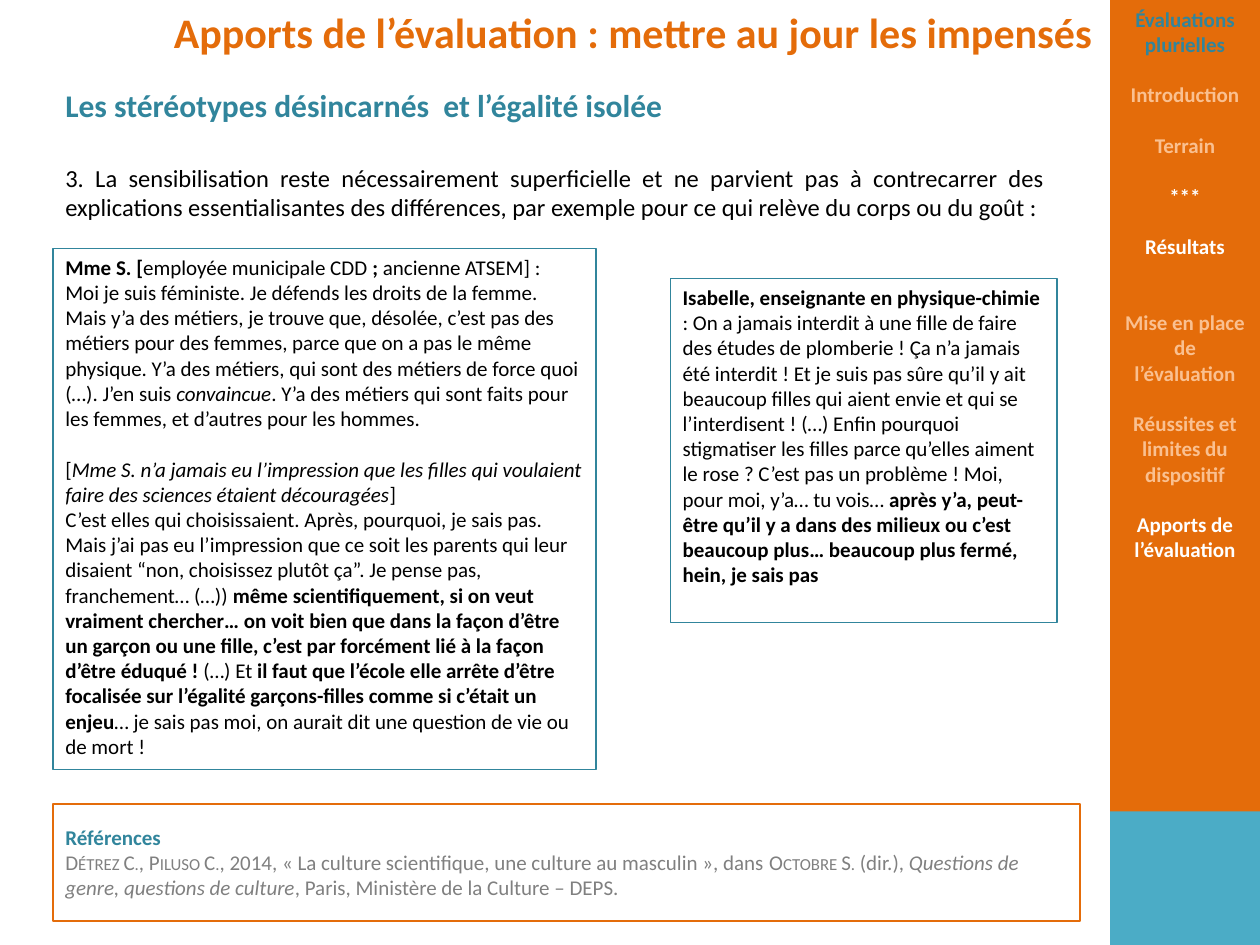
"""Build the slide on what the evaluation brings to light."""
from pptx import Presentation
from pptx.dml.color import RGBColor
from pptx.enum.shapes import MSO_SHAPE
from pptx.enum.text import MSO_ANCHOR, PP_ALIGN
from pptx.util import Inches, Pt

COLORS = {
    "orange": "E46C0A",
    "teal": "31859C",
    "aqua": "4BACC6",
    "peach": "FAC090",
    "gray": "808080",
    "white": "FFFFFF",
    "black": "000000",
}
BLANK_LINE = 14.5

MME_S = [
    [("Mme S. [", "b"), ("employée municipale CDD ", ""), ("; ", "b"), ("ancienne ATSEM] :", "")],
    [
        ("Moi je suis féministe. Je défends les droits de la femme. Mais y’a des métiers, "
         "je trouve que, désolée, c’est pas des métiers pour des femmes, parce que on a pas "
         "le même physique. Y’a des métiers, qui sont des métiers de force quoi (…). "
         "J’en suis ", ""),
        ("convaincue", "i"),
        (". Y’a des métiers qui sont faits pour les femmes, et d’autres pour les hommes.", ""),
    ],
    [
        ("[", ""),
        ("Mme S. n’a jamais eu l’impression que les filles qui voulaient faire des sciences "
         "étaient découragées", "i"),
        ("]", ""),
    ],
    [
        ("C’est elles qui choisissaient. Après, pourquoi, je sais pas. Mais j’ai pas eu "
         "l’impression que ce soit les parents qui leur disaient “non, choisissez plutôt ça”. "
         "Je pense pas, franchement… (…)) ", ""),
        ("même scientifiquement, si on veut vraiment chercher… on voit bien que dans la façon "
         "d’être un garçon ou une fille, c’est par forcément lié à la façon d’être éduqué !", "b"),
        (" (…) Et ", ""),
        ("il faut que l’école elle arrête d’être focalisée sur l’égalité garçons-filles "
         "comme si c’était un enjeu", "b"),
        ("… je sais pas moi, on aurait dit une question de vie ou de mort !", ""),
    ],
]
ISABELLE = [
    ("Isabelle, enseignante en physique-chimie ", "b"),
    (": On a jamais interdit à une fille de faire des études de plomberie ! Ça n’a jamais été "
     "interdit ! Et je suis pas sûre qu’il y ait beaucoup filles qui aient envie et qui se "
     "l’interdisent ! (…) Enfin pourquoi stigmatiser les filles parce qu’elles aiment le "
     "rose ? C’est pas un problème ! Moi, pour moi, y’a… tu vois… ", ""),
    ("après y’a, peut-être qu’il y a dans des milieux ou c’est beaucoup plus… beaucoup plus "
     "fermé, hein, je sais pas", "b"),
]
REFERENCE = [
    ("Détrez C.", "s"),
    (", ", ""),
    ("Piluso C.", "s"),
    (", 2014, « La culture scientifique, une culture au masculin », dans ", ""),
    ("Octobre S.", "s"),
    (" (dir.), ", ""),
    ("Questions de genre, questions de culture", "i"),
    (", Paris, Ministère de la Culture – DEPS.", ""),
]
OUTLINE = [
    ("Évaluations plurielles", "teal", 0),
    ("Introduction", "peach", 1),
    ("Terrain", "peach", 1),
    ("***", "white", 1),
    ("Résultats", "white", 1),
    ("Mise en place de l’évaluation", "peach", 2),
    ("Réussites et limites du dispositif", "peach", 1),
    ("Apports de l’évaluation", "white", 1),
]


def rgb(name):
    """Return the named colour."""
    return RGBColor.from_string(COLORS[name])


def add_paragraph(frame, runs, color="black", size=12, align=PP_ALIGN.LEFT, before=0, after=0):
    """Add a paragraph of (text, style) runs: b bold, i italic, s small capitals."""
    paragraph = frame.paragraphs[0]
    if paragraph.runs:
        paragraph = frame.add_paragraph()
    paragraph.alignment = align
    paragraph.space_before, paragraph.space_after = Pt(before), Pt(after)
    for text, style in runs:
        run = paragraph.add_run()
        run.text = text
        font = run.font
        font.name, font.size = "Calibri", Pt(size)
        font.bold, font.italic = "b" in style, "i" in style
        font.color.rgb = rgb(color)
        if "s" in style:
            run._r.get_or_add_rPr().set("cap", "small")


def add_text(slide, left, top, width, height, wrap=True):
    """Add a text box and return its text frame."""
    frame = slide.shapes.add_textbox(
        Inches(left), Inches(top), Inches(width), Inches(height)
    ).text_frame
    frame.word_wrap = wrap
    return frame


def add_panel(slide, left, top, width, height, fill=None, line=None, weight=0.75,
              anchor=MSO_ANCHOR.TOP):
    """Add a rectangle and return its text frame."""
    panel = slide.shapes.add_shape(
        MSO_SHAPE.RECTANGLE, Inches(left), Inches(top), Inches(width), Inches(height)
    )
    panel.shadow.inherit = False
    if fill:
        panel.fill.solid()
        panel.fill.fore_color.rgb = rgb(fill)
    else:
        panel.fill.background()
    if line:
        panel.line.color.rgb = rgb(line)
        panel.line.width = Pt(weight)
    else:
        panel.line.fill.background()
    frame = panel.text_frame
    frame.word_wrap = True
    frame.vertical_anchor = anchor
    return frame


def add_sidebar(slide):
    """Add the outline of the talk down the right edge."""
    sidebar = add_panel(slide, 8.81, 0, 1.19, 7.44, fill="orange")
    for title, color, blanks in OUTLINE:
        add_paragraph(sidebar, [(title, "b")], color, align=PP_ALIGN.CENTER,
                      before=blanks * BLANK_LINE)
    add_panel(slide, 8.81, 6.44, 1.19, 1.06, fill="aqua")


def main():
    """Build and save the slide."""
    deck = Presentation()
    deck.slide_width, deck.slide_height = Inches(10), Inches(7.5)
    slide = deck.slides.add_slide(deck.slide_layouts[6])

    argument = add_text(slide, 0.42, 0.63, 7.97, 1.25)
    add_paragraph(argument, [("Les stéréotypes désincarnés  et l’égalité isolée", "b")],
                  "teal", 18, PP_ALIGN.JUSTIFY)
    add_paragraph(argument, [(
        "3. La sensibilisation reste nécessairement superficielle et ne parvient pas à "
        "contrecarrer des explications essentialisantes des différences, par exemple pour "
        "ce qui relève du corps ou du goût :", "")],
        size=14, align=PP_ALIGN.JUSTIFY, before=22.6)

    references = add_panel(slide, 0.42, 6.38, 8.15, 0.93, "white", "orange", 1,
                           MSO_ANCHOR.MIDDLE)
    add_paragraph(references, [("Références", "b")], "teal")
    add_paragraph(references, REFERENCE, "gray", after=6)

    title = add_text(slide, 1.24, 0, 7.57, 0.5, wrap=False)
    add_paragraph(title, [("Apports de l’évaluation : mettre au jour les impensés", "b")],
                  "orange", 24, PP_ALIGN.CENTER)

    municipal_quote = add_panel(slide, 0.42, 1.97, 4.31, 4.14, line="teal")
    for index, runs in enumerate(MME_S):
        add_paragraph(municipal_quote, runs, before=BLANK_LINE if index == 2 else 0)

    teacher_quote = add_panel(slide, 5.32, 2.21, 3.07, 2.73, line="teal")
    add_paragraph(teacher_quote, ISABELLE)

    add_sidebar(slide)
    deck.save("out.pptx")


if __name__ == "__main__":
    main()
